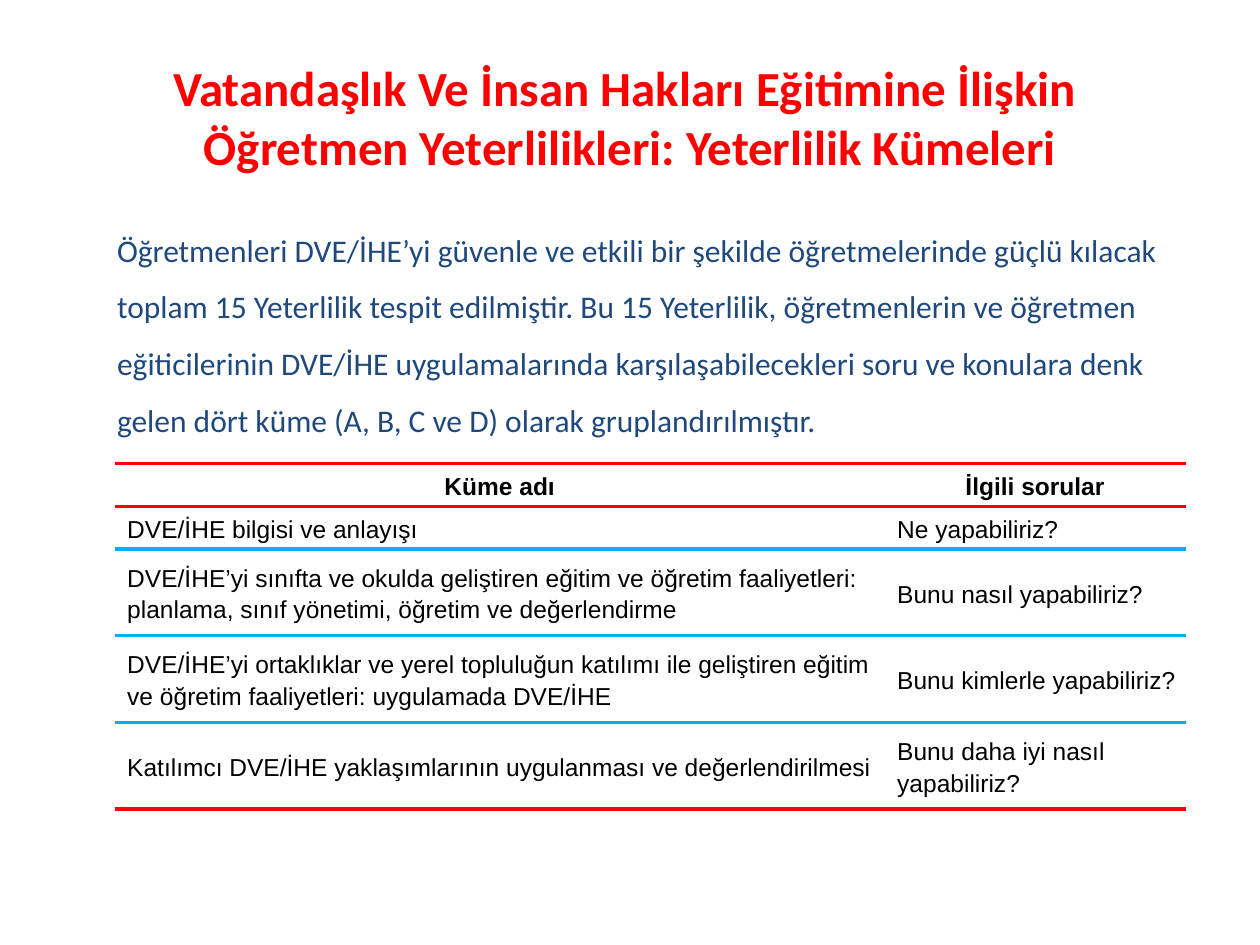
from lxml import etree
from pptx import Presentation
from pptx.dml.color import RGBColor
from pptx.enum.text import MSO_ANCHOR, PP_ALIGN
from pptx.oxml.ns import qn
from pptx.util import Pt

RED = RGBColor(0xFF, 0x00, 0x00)
SKY = RGBColor(0x00, 0xB0, 0xF0)
NAVY = RGBColor(0x1F, 0x49, 0x7D)
BLACK = RGBColor(0x00, 0x00, 0x00)
CENTER, LEFT = PP_ALIGN.CENTER, PP_ALIGN.LEFT
MIDDLE, TOP = MSO_ANCHOR.MIDDLE, MSO_ANCHOR.TOP

TITLE = (
    "Vatandaşlık Ve İnsan Hakları Eğitimine İlişkin \v"
    "Öğretmen Yeterlilikleri: Yeterlilik Kümeleri"
)
INTRO = (
    "Öğretmenleri DVE/İHE’yi güvenle ve etkili bir şekilde öğretmelerinde güçlü "
    "kılacak toplam 15 Yeterlilik tespit edilmiştir. Bu 15 Yeterlilik, öğretmenlerin "
    "ve öğretmen eğiticilerinin DVE/İHE uygulamalarında karşılaşabilecekleri soru ve "
    "konulara denk gelen dört küme (A, B, C ve D) olarak gruplandırılmıştır."
)
CLUSTERS = [
    ("Küme adı", "İlgili sorular"),
    ("DVE/İHE bilgisi ve anlayışı", "Ne yapabiliriz?"),
    (
        "DVE/İHE’yi sınıfta ve okulda geliştiren eğitim ve öğretim faaliyetleri: "
        "planlama, sınıf yönetimi, öğretim ve değerlendirme",
        "Bunu nasıl yapabiliriz?",
    ),
    (
        "DVE/İHE’yi ortaklıklar ve yerel topluluğun katılımı ile geliştiren eğitim "
        "ve öğretim faaliyetleri: uygulamada DVE/İHE",
        "Bunu kimlerle yapabiliriz?",
    ),
    (
        "Katılımcı DVE/İHE yaklaşımlarının uygulanması ve değerlendirilmesi",
        "Bunu daha iyi nasıl yapabiliriz?",
    ),
]
COLUMN_WIDTHS = [440, 172]
ROW_HEIGHTS = [24.5, 24.5, 49.5, 49.5, 49.5]
RULE_COLORS = [RED, RED, SKY, SKY, SKY, RED]


def format_paragraph(paragraph, font_name, size, color, spacing, align, bold=False):
    paragraph.alignment = align
    paragraph.line_spacing = spacing
    for run in paragraph.runs:
        run.font.name = font_name
        run.font.size = Pt(size)
        run.font.bold = bold
        run.font.color.rgb = color


def add_text(slide, box, text, anchor, **style):
    frame = slide.shapes.add_textbox(*map(Pt, box)).text_frame
    frame.word_wrap = True
    frame.vertical_anchor = anchor
    frame.text = text
    format_paragraph(frame.paragraphs[0], font_name="Calibri", **style)


def add_title(slide, box):
    add_text(slide, box, TITLE, MIDDLE, size=28, color=RED, spacing=1, align=CENTER, bold=True)


def add_intro(slide, box):
    add_text(slide, box, INTRO, TOP, size=18, color=NAVY, spacing=1.5, align=LEFT)


def set_rules(cell, top_color, bottom_color):
    properties = cell._tc.get_or_add_tcPr()
    edges = [("lnL", None), ("lnR", None), ("lnT", top_color), ("lnB", bottom_color)]
    for position, (tag, color) in enumerate(edges):
        edge = etree.Element(qn(f"a:{tag}"))
        if color is None:
            etree.SubElement(edge, qn("a:noFill"))
        else:
            edge.set("w", str(Pt(2.25)))
            fill = etree.SubElement(edge, qn("a:solidFill"))
            etree.SubElement(fill, qn("a:srgbClr"), val=str(color))
        properties.insert(position, edge)


def fill_cell(cell, text, is_header):
    cell.margin_left = cell.margin_right = cell.margin_top = cell.margin_bottom = 0
    cell.vertical_anchor = MIDDLE
    cell.fill.background()
    cell.text = text
    paragraph = cell.text_frame.paragraphs[0]
    if not is_header:
        paragraph._p.get_or_add_pPr().set("marL", str(Pt(7.2)))
    align = CENTER if is_header else LEFT
    format_paragraph(paragraph, "Arial", 14, BLACK, 1.15, align, is_header)


def add_cluster_table(slide, left, top):
    table = slide.shapes.add_table(
        len(CLUSTERS), len(COLUMN_WIDTHS),
        Pt(left), Pt(top), Pt(sum(COLUMN_WIDTHS)), Pt(sum(ROW_HEIGHTS)),
    ).table
    table.first_row = table.horz_banding = False
    for column, width in zip(table.columns, COLUMN_WIDTHS):
        column.width = Pt(width)
    for index, (row, height, texts) in enumerate(zip(table.rows, ROW_HEIGHTS, CLUSTERS)):
        row.height = Pt(height)
        for cell, text in zip(row.cells, texts):
            fill_cell(cell, text, is_header=index == 0)
            set_rules(cell, RULE_COLORS[index], RULE_COLORS[index + 1])


def main():
    presentation = Presentation()
    presentation.slide_width, presentation.slide_height = Pt(720), Pt(540)
    slide = presentation.slides.add_slide(presentation.slide_layouts[6])
    add_title(slide, (36, 21.6, 648, 90))
    add_cluster_table(slide, 65.5, 264.8)
    add_intro(slide, (59.8, 117.4, 617.8, 134.6))
    presentation.save("out.pptx")


if __name__ == "__main__":
    main()
